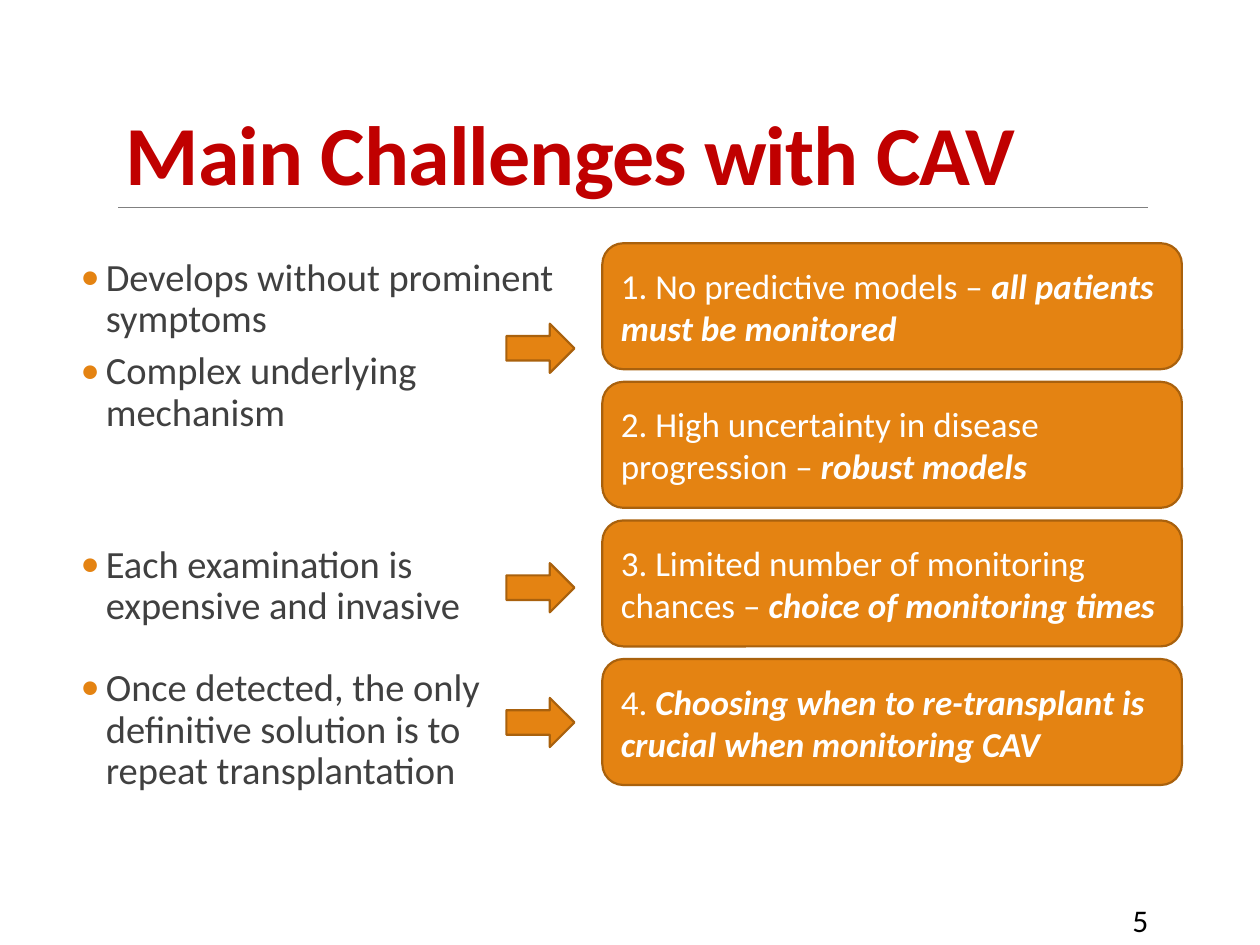
from dataclasses import dataclass

from lxml import etree
from pptx import Presentation
from pptx.dml.color import RGBColor
from pptx.enum import shapes, text
from pptx.oxml import ns
from pptx.util import Pt


@dataclass(frozen=True)
class Theme:
    font: str = "Calibri"
    title: str = "C00000"
    body: str = "404040"
    accent: str = "E48312"
    edge: str = "A9610D"
    rule: str = "808080"
    light: str = "FFFFFF"
    dark: str = "000000"
    title_size: float = 48
    body_size: float = 22
    card_size: float = 20
    number_size: float = 18
    edge_width: float = 1.25
    rule_width: float = 0.5


THEME = Theme()

BULLETS = [
    ("Develops without prominent symptoms", 0),
    ("Complex underlying mechanism", 2),
    ("Each examination is expensive and invasive", 59),
    ("Once detected, the only definitive solution is to repeat transplantation", 19),
]
CARDS = [
    ("1. No predictive models – ", "all patients must be monitored"),
    ("2. High uncertainty in disease progression – ", "robust models"),
    ("3. Limited number of monitoring chances – ", "choice of monitoring times"),
    ("4. ", "Choosing when to re-transplant is crucial when monitoring CAV"),
]
ARROW_OFFSETS = (0, 136.8, 213.8)


def set_values(target, values):
    for name, value in values.items():
        setattr(target, name, value)


def add_span(para, words, size, color, **extra):
    span = para.add_run()
    span.text = words
    set_values(span.font, {"name": THEME.font, "size": Pt(size), **extra})
    span.font.color.rgb = RGBColor.from_string(color)
    return span


def add_text_box(page, left, top, width, height, **frame_values):
    box = page.shapes.add_textbox(Pt(left), Pt(top), Pt(width), Pt(height))
    set_values(box.text_frame, {"word_wrap": True, **frame_values})
    return box.text_frame


def add_accent_shape(page, kind, left, top, width, height):
    shape = page.shapes.add_shape(kind, Pt(left), Pt(top), Pt(width), Pt(height))
    shape.shadow.inherit = False
    shape.fill.solid()
    shape.fill.fore_color.rgb = RGBColor.from_string(THEME.accent)
    shape.line.color.rgb = RGBColor.from_string(THEME.edge)
    shape.line.width = Pt(THEME.edge_width)
    return shape


def set_bullet(para):
    properties = para._p.get_or_add_pPr()
    properties.set("marL", str(Pt(30.24)))
    properties.set("indent", str(Pt(-14.4)))
    color = etree.SubElement(properties, ns.qn("a:buClr"))
    etree.SubElement(color, ns.qn("a:srgbClr"), val=THEME.accent)
    etree.SubElement(properties, ns.qn("a:buFont"), typeface=THEME.font)
    etree.SubElement(properties, ns.qn("a:buChar"), char="•")


def add_title(page, left, top, width, height):
    frame = add_text_box(page, left, top, width, height,
                         vertical_anchor=text.MSO_ANCHOR.BOTTOM)
    para = frame.paragraphs[0]
    para.line_spacing = 0.85
    span = add_span(para, "Main Challenges with CAV", THEME.title_size,
                    THEME.title, bold=True)
    span._r.get_or_add_rPr().set("spc", "-50")
    rule_left, rule_top = left + 2.9, top + height - 0.7
    rule = page.shapes.add_connector(
        shapes.MSO_CONNECTOR.STRAIGHT, Pt(rule_left), Pt(rule_top),
        Pt(rule_left + width - 5.8), Pt(rule_top))
    rule.line.color.rgb = RGBColor.from_string(THEME.rule)
    rule.line.width = Pt(THEME.rule_width)
    etree.SubElement(rule._element.spPr, ns.qn("a:effectLst"))


def add_bullets(page, left, top, width, height):
    frame = add_text_box(page, left, top, width, height, margin_left=0,
                         margin_right=0, margin_top=Pt(15.6))
    for index, (words, gap) in enumerate(BULLETS):
        para = frame.add_paragraph() if index else frame.paragraphs[0]
        set_values(para, {"line_spacing": 0.9, "space_before": Pt(gap),
                          "space_after": Pt(4)})
        set_bullet(para)
        add_span(para, words, THEME.body_size, THEME.body)


def add_cards(page, left, top, width, height):
    card_height = 72
    pitch = (height - card_height) / (len(CARDS) - 1)
    for index, (lead, stress) in enumerate(CARDS):
        card = add_accent_shape(page, shapes.MSO_SHAPE.ROUNDED_RECTANGLE,
                                left, top + index * pitch, width, card_height)
        set_values(card.text_frame, {"word_wrap": True,
                                     "vertical_anchor": text.MSO_ANCHOR.MIDDLE})
        para = card.text_frame.paragraphs[0]
        para.alignment = text.PP_ALIGN.LEFT
        add_span(para, lead, THEME.card_size, THEME.light)
        add_span(para, stress, THEME.card_size, THEME.light, bold=True, italic=True)


def add_arrows(page, left, top, width, height):
    for offset in ARROW_OFFSETS:
        add_accent_shape(page, shapes.MSO_SHAPE.RIGHT_ARROW,
                         left, top + offset, width, height)


def add_page_number(page, left, top, width, height):
    frame = add_text_box(page, left, top, width, height)
    add_span(frame.paragraphs[0], "5", THEME.number_size, THEME.dark)


def main():
    deck = Presentation()
    set_values(deck, {"slide_width": Pt(720), "slide_height": Pt(540)})
    page = deck.slides.add_slide(deck.slide_layouts[6])
    add_title(page, 64.8, 5, 594, 114.5)
    add_bullets(page, 30.24, 131.8, 288.7, 344)
    add_cards(page, 344.2, 139, 331.2, 309.6)
    add_arrows(page, 289.4, 185, 38.9, 28.1)
    add_page_number(page, 640, 511.2, 77.8, 28.8)
    deck.save("out.pptx")


if __name__ == "__main__":
    main()
